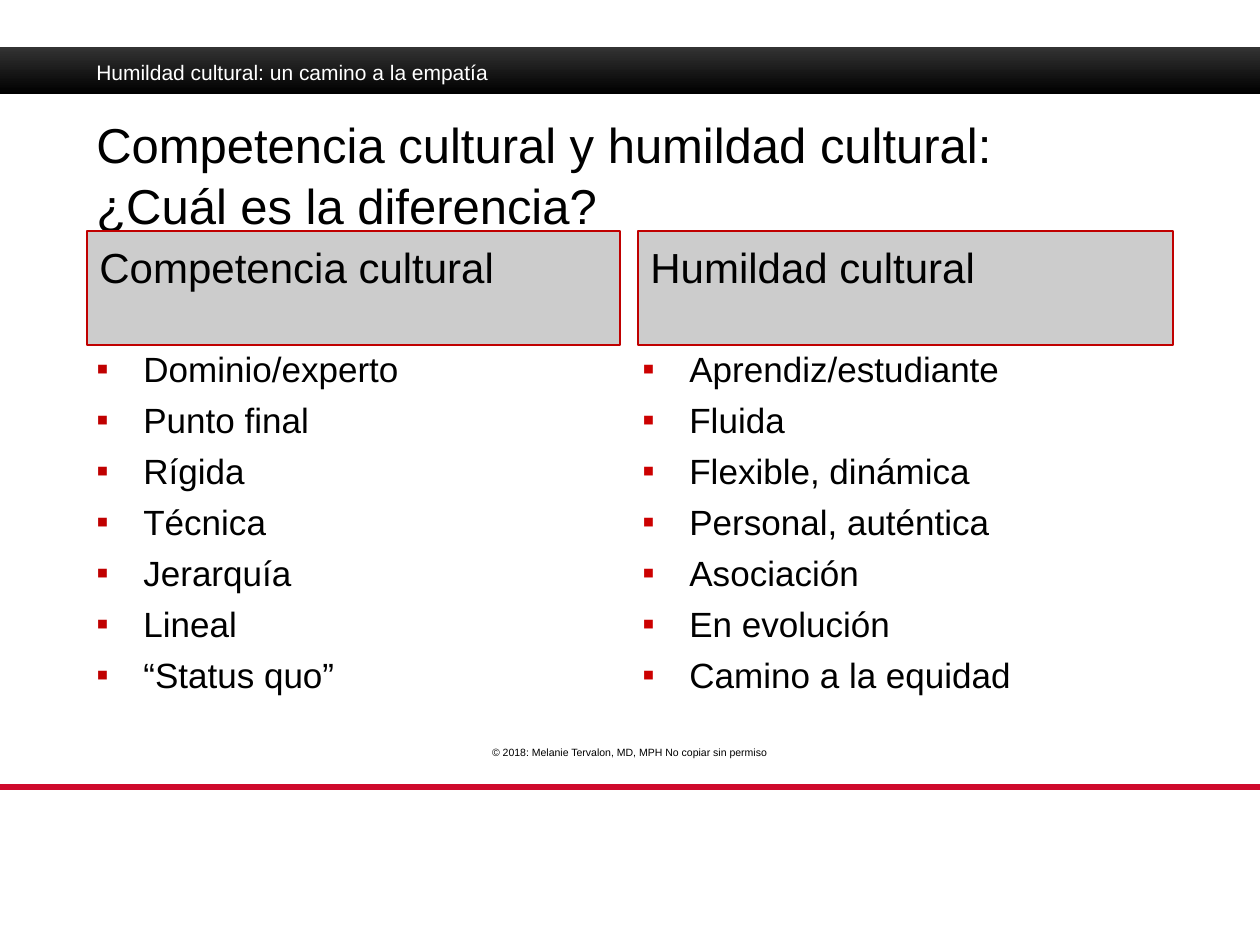
from lxml.etree import SubElement
from pptx import Presentation
from pptx.dml.color import RGBColor
from pptx.enum.shapes import MSO_CONNECTOR, MSO_SHAPE
from pptx.enum.text import MSO_ANCHOR, PP_ALIGN
from pptx.oxml.ns import qn
from pptx.util import Emu, Pt

PX_PER_INCH = 126
WIDTH, HEIGHT = 1260, 945
INDENT = 47
FONT = "Arial"
LINE_SPACING = 1.05
COLORS = {
    "black": "000000",
    "white": "FFFFFF",
    "band_top": "333333",
    "rule": "CF0A2C",
    "heading_fill": "CCCCCC",
    "dark_red": "C00000",
    "bright_red": "CC0000",
}


def px(value):
    return Emu(round(value * 914400 / PX_PER_INCH))


def color(name):
    return RGBColor.from_string(COLORS[name])


def style(paragraph, size, color_name="black"):
    paragraph.font.name = FONT
    paragraph.font.size = Pt(size)
    paragraph.font.color.rgb = color(color_name)


def add_text(slide, box, text, size, color_name="black"):
    """Add a one-paragraph text box and return its paragraph."""
    frame = slide.shapes.add_textbox(*map(px, box)).text_frame
    frame.word_wrap = True
    paragraph = frame.paragraphs[0]
    paragraph.text = text
    style(paragraph, size, color_name)
    return paragraph


def add_bullet(paragraph, color_name):
    properties = paragraph._p.get_or_add_pPr()
    properties.set("marL", str(px(INDENT)))
    properties.set("indent", str(-px(INDENT)))
    bullet_color = SubElement(properties, qn("a:buClr"))
    SubElement(bullet_color, qn("a:srgbClr"), val=COLORS[color_name])
    SubElement(properties, qn("a:buFont"), typeface=FONT)
    SubElement(properties, qn("a:buChar"), char="▪")


def add_band(slide, box, text):
    left, top, width, height = box
    band = slide.shapes.add_shape(MSO_SHAPE.RECTANGLE, *map(px, box))
    band.shadow.inherit = False
    band.line.fill.background()
    band.fill.gradient()
    band.fill.gradient_angle = 270
    for stop, name in zip(band.fill.gradient_stops, ("band_top", "black")):
        stop.color.rgb = color(name)
    add_text(slide, (left + 84, top + 6, 703, 42), text, 12, "white")


def add_heading(slide, box, text):
    heading = slide.shapes.add_shape(MSO_SHAPE.RECTANGLE, *map(px, box))
    heading.shadow.inherit = False
    heading.fill.solid()
    heading.fill.fore_color.rgb = color("heading_fill")
    heading.line.color.rgb = color("dark_red")
    heading.line.width = Pt(0.75)
    frame = heading.text_frame
    frame.word_wrap = True
    frame.vertical_anchor = MSO_ANCHOR.TOP
    frame.margin_top = px(8)
    paragraph = frame.paragraphs[0]
    paragraph.text = text
    paragraph.alignment = PP_ALIGN.LEFT
    paragraph.line_spacing = LINE_SPACING
    style(paragraph, 24)


def add_bullet_list(slide, box, items, bullet_color):
    frame = slide.shapes.add_textbox(*map(px, box)).text_frame
    frame.word_wrap = True
    for index, item in enumerate(items):
        paragraph = frame.add_paragraph() if index else frame.paragraphs[0]
        paragraph.text = item
        paragraph.line_spacing = LINE_SPACING
        if index:
            paragraph.space_before = Pt(4)
        add_bullet(paragraph, bullet_color)
        style(paragraph, 20)


def add_column(slide, box, list_offset, heading, items, bullet_color):
    """Place a heading at the top of the box and its bullet list below."""
    left, top, width, height = box
    add_heading(slide, (left, top, width, 114), heading)
    list_box = (left + list_offset, top + 108, 538, height - 108)
    add_bullet_list(slide, list_box, items, bullet_color)


def add_footer(slide, box, text):
    left, top, width, height = box
    copyright_line = add_text(slide, (left + 339, top, 581, 25), text, 6)
    copyright_line.alignment = PP_ALIGN.CENTER
    rule_y = px(top + height)
    rule = slide.shapes.add_connector(
        MSO_CONNECTOR.STRAIGHT, px(left), rule_y, px(left + width), rule_y)
    rule.line.color.rgb = color("rule")
    rule.line.width = Pt(3)
    SubElement(rule._element.spPr, qn("a:effectLst"))


def main():
    presentation = Presentation()
    presentation.slide_width, presentation.slide_height = px(WIDTH), px(HEIGHT)
    slide = presentation.slides.add_slide(presentation.slide_layouts[6])

    add_band(slide, (0, 47, WIDTH, 47), "Humildad cultural: un camino a la empatía")
    title = add_text(
        slide, (84, 105, 1092, 95),
        "Competencia cultural y humildad cultural:\v¿Cuál es la diferencia?", 28)
    title.line_spacing = LINE_SPACING
    add_column(
        slide, (87, 231, 533, 620), -3, "Competencia cultural",
        ["Dominio/experto", "Punto final", "Rígida", "Técnica", "Jerarquía",
         "Lineal", "“Status quo”"], "dark_red")
    add_column(
        slide, (638, 231, 535, 593), -8, "Humildad cultural",
        ["Aprendiz/estudiante", "Fluida", "Flexible, dinámica",
         "Personal, auténtica", "Asociación", "En evolución",
         "Camino a la equidad"], "bright_red")
    add_footer(slide, (0, 740, WIDTH, 47),
               "© 2018: Melanie Tervalon, MD, MPH No copiar sin permiso")

    presentation.save("out.pptx")


if __name__ == "__main__":
    main()
